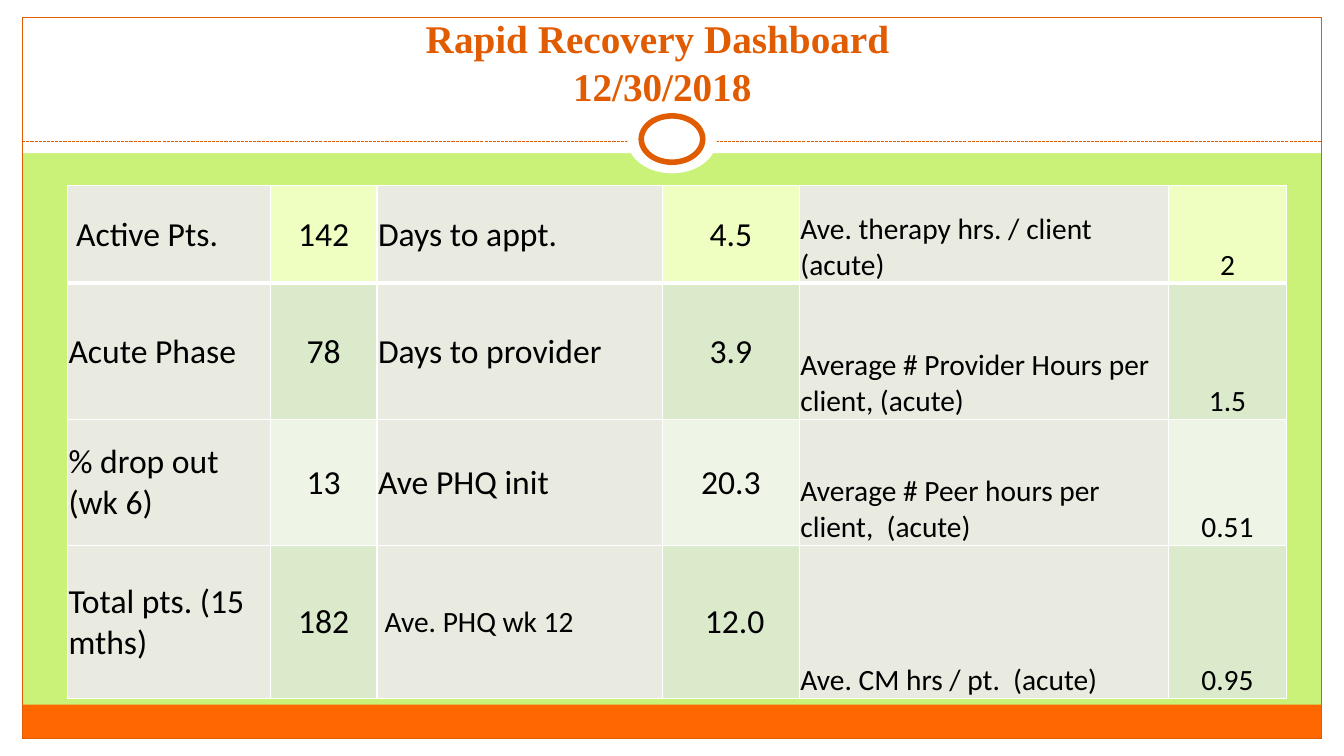
from pptx import Presentation
from pptx.dml.color import RGBColor
from pptx.enum.dml import MSO_LINE
from pptx.enum.shapes import MSO_CONNECTOR, MSO_SHAPE
from pptx.enum.text import MSO_ANCHOR as ANCHOR, PP_ALIGN as ALIGN
from pptx.oxml import parse_xml
from pptx.oxml.ns import nsdecls
from pptx.util import Pt

EMU_PER_PX = 9144  # 100 px to the inch
COLORS = {
    "lime": "CAF278", "white": "FFFFFF", "orange": "FF6700", "rust": "E15B00",
    "label": "E9EAE0", "first": "EFFFC1", "odd": "DCEACC", "even": "EEF5E7",
    "black": "000000",
}
WIDTH, HEIGHT = 1333, 750
SIDE, EDGE = 22, 17  # page margins
INNER = WIDTH - 2 * SIDE
RULE_Y = 140
COLUMNS = [201, 106, 283, 136, 366, 117]
ROWS = [97, 135, 125, 152]
VALUE_FILLS = ["first", "odd", "even", "odd"]
DASHBOARD = [
    [" Active Pts.", "142", "Days to appt.", "4.5",
     "Ave. therapy hrs. / client (acute)", "2"],
    ["Acute Phase", "78", "Days to provider", "3.9",
     "Average # Provider Hours per client, (acute)", "1.5"],
    ["% drop out (wk 6)", "13", "Ave PHQ init", "20.3",
     "Average # Peer hours per client,  (acute)", "0.51"],
    ["Total pts. (15 mths)", "182", " Ave. PHQ wk 12", " 12.0",
     "Ave. CM hrs / pt.  (acute)", "0.95"],
]
SMALL_LABEL = (3, 2)  # "Ave. PHQ wk 12"


def px(*lengths):
    return [length * EMU_PER_PX for length in lengths]


def rgb(name):
    return RGBColor.from_string(COLORS[name])


class Canvas:
    def __init__(self, slide):
        self.slide = slide
        self.shapes = slide.shapes

    def background(self, color):
        fill = self.slide.background.fill
        fill.solid()
        fill.fore_color.rgb = rgb(color)

    def shape(self, kind, box, fill=None, line=None, weight=0.75):
        shape = self.shapes.add_shape(kind, *px(*box))
        shape.shadow.inherit = False
        if fill:
            shape.fill.solid()
            shape.fill.fore_color.rgb = rgb(fill)
        else:
            shape.fill.background()
        if line:
            shape.line.color.rgb = rgb(line)
            shape.line.width = Pt(weight)
        else:
            shape.line.fill.background()

    def dashed_rule(self, left, right, y, color):
        rule = self.shapes.add_connector(
            MSO_CONNECTOR.STRAIGHT, *px(left, y, right, y))
        rule.line.color.rgb = rgb(color)
        rule.line.width = Pt(0.75)
        rule.line.dash_style = MSO_LINE.SQUARE_DOT
        rule.element.spPr.append(
            parse_xml(f"<a:effectLst {nsdecls('a')}/>"))

    def set_text(self, paragraph, text, font, size, color, align, bold=False):
        paragraph.text = text
        paragraph.alignment = align
        paragraph.font.name = font
        paragraph.font.size = Pt(size)
        paragraph.font.bold = bold
        paragraph.font.color.rgb = rgb(color)

    def title(self, box, text):
        frame = self.shapes.add_textbox(*px(*box)).text_frame
        frame.word_wrap = True
        frame.vertical_anchor = ANCHOR.BOTTOM
        self.set_text(frame.paragraphs[0], text, "Times New Roman", 28, "rust",
                      ALIGN.CENTER, bold=True)

    def borders(self, cell, weights):
        """Draw white borders; weights are points for left, right, top, bottom."""
        properties = cell._tc.get_or_add_tcPr()
        for place, (side, weight) in enumerate(zip("LRTB", weights)):
            properties.insert(place, parse_xml(
                f'<a:ln{side} {nsdecls("a")} w="{Pt(weight)}"><a:solidFill>'
                f'<a:srgbClr val="{COLORS["white"]}"/></a:solidFill></a:ln{side}>'))

    def cell(self, cell, text, fill, size, align, anchor):
        cell.margin_left, cell.margin_top, cell.margin_right, cell.margin_bottom = px(
            1, 1, 1, 0)
        cell.vertical_anchor = anchor
        cell.fill.solid()
        cell.fill.fore_color.rgb = rgb(fill)
        self.set_text(cell.text_frame.paragraphs[0], text, "Calibri", size, "black", align)

    def table(self, left, top):
        table = self.shapes.add_table(
            len(ROWS), len(COLUMNS),
            *px(left, top, sum(COLUMNS), sum(ROWS))).table
        table.first_row = table.horz_banding = False
        for column, width in zip(table.columns, COLUMNS):
            column.width, = px(width)
        for row, height in zip(table.rows, ROWS):
            row.height, = px(height)
        for r, texts in enumerate(DASHBOARD):
            for c, text in enumerate(texts):
                is_value, is_hours = c % 2 == 1, c >= 4
                cell = table.cell(r, c)
                self.cell(
                    cell, text,
                    fill=VALUE_FILLS[r] if is_value else "label",
                    size=21 if is_hours or (r, c) == SMALL_LABEL else 24,
                    align=ALIGN.CENTER if is_value else ALIGN.LEFT,
                    anchor=ANCHOR.BOTTOM if is_hours else ANCHOR.MIDDLE)
                self.borders(cell, (1, 1, 3 if r == 1 else 1, 3 if r == 0 else 1))


def main():
    deck = Presentation()
    deck.slide_width, deck.slide_height = px(WIDTH, HEIGHT)
    canvas = Canvas(deck.slides.add_slide(deck.slide_layouts[6]))
    canvas.background("lime")

    for margin in [(0, HEIGHT - EDGE, WIDTH, EDGE), (0, 0, WIDTH, 152),
                   (0, 0, SIDE, HEIGHT), (WIDTH - SIDE, 0, SIDE, HEIGHT)]:
        canvas.shape(MSO_SHAPE.RECTANGLE, margin, fill="white")
    canvas.shape(MSO_SHAPE.RECTANGLE, (SIDE, 699, INNER, 34), fill="orange")
    canvas.shape(MSO_SHAPE.RECTANGLE, (SIDE, EDGE, INNER, HEIGHT - 2 * EDGE), line="rust")
    canvas.dashed_rule(SIDE, SIDE + INNER, RULE_Y, "rust")
    canvas.shape(MSO_SHAPE.OVAL, (622, 105, 89, 67), fill="white")
    canvas.shape(MSO_SHAPE.OVAL, (636, 115, 61, 46), fill="white", line="rust", weight=4)

    canvas.title((221, 33, 862, 80), "Rapid Recovery Dashboard\n 12/30/2018")
    canvas.table(67, 184)
    deck.save("out.pptx")


if __name__ == "__main__":
    main()
